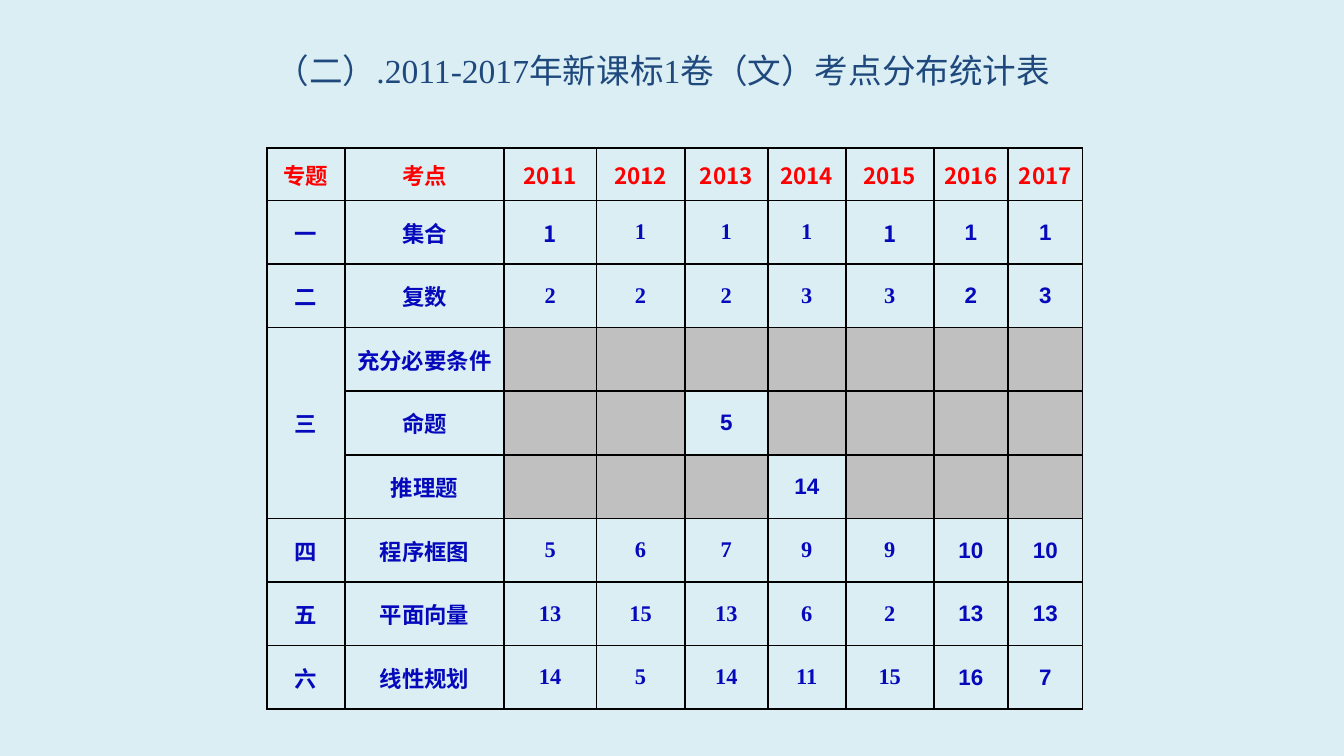
"""Build a slide with a table of exam topics by year."""
from dataclasses import dataclass

from lxml.etree import SubElement
from pptx import Presentation
from pptx.dml.color import RGBColor
from pptx.enum.text import MSO_ANCHOR as Anchor, PP_ALIGN as Align
from pptx.oxml.ns import qn
from pptx.util import Pt


@dataclass(frozen=True)
class Theme:
    background: str = "DBEEF4"
    title: str = "1F497D"
    header: str = "FF0000"
    body: str = "0509BB"
    empty: str = "C0C0C0"
    border: str = "000000"
    title_size: float = 18
    table_size: float = 12
    cjk: str = "Noto Sans CJK SC"
    serif: str = "Times New Roman"
    sans: str = "Arial"


THEME = Theme()
TITLE = "（二）.2011-2017年新课标1卷（文）考点分布统计表"
COLUMN_WIDTHS = [41.8, 85.2, 49.5, 47.4, 44.5, 41.8, 47.1, 39.9, 39.9]
HEADER_HEIGHT, ROW_HEIGHT = 28.1, 34.1
ROWS = [
    ["专题", "考点", "2011", "2012", "2013", "2014", "2015", "2016", "2017"],
    ["一", "集合", "1", "1", "1", "1", "1", "1", "1"],
    ["二", "复数", "2", "2", "2", "3", "3", "2", "3"],
    ["三", "充分必要条件", "", "", "", "", "", "", ""],
    ["", "命题", "", "", "5", "", "", "", ""],
    ["", "推理题", "", "", "", "14", "", "", ""],
    ["四", "程序框图", "5", "6", "7", "9", "9", "10", "10"],
    ["五", "平面向量", "13", "15", "13", "6", "2", "13", "13"],
    ["六", "线性规划", "14", "5", "14", "11", "15", "16", "7"],
]
LOGIC_ROWS = range(3, 6)
FIRST_YEAR, FIRST_SANS_YEAR = 2, 7
CJK_NUMBERS = {(1, 2), (1, 6)}


def format_text(paragraph, font_name, size, color, bold=False):
    """Centre a paragraph and format its runs."""
    paragraph.alignment = Align.CENTER
    for run in paragraph.runs:
        font = run.font
        font.name, font.size, font.bold = font_name, Pt(size), bold
        font.color.rgb = RGBColor.from_string(color)
        SubElement(font._element, qn("a:ea"), typeface=THEME.cjk)


def add_borders(cell):
    """Draw a thin line on each side of a cell."""
    properties = cell._tc.get_or_add_tcPr()
    for side in ("lnL", "lnR", "lnT", "lnB"):
        line = SubElement(properties, qn(f"a:{side}"), w=str(Pt(1)))
        fill = SubElement(line, qn("a:solidFill"))
        SubElement(fill, qn("a:srgbClr"), val=THEME.border)


def cell_font(row, column):
    """Choose the typeface for a position in the table."""
    if row == 0 or column < FIRST_YEAR or (row, column) in CJK_NUMBERS:
        return THEME.cjk
    if column >= FIRST_SANS_YEAR or row in LOGIC_ROWS:
        return THEME.sans
    return THEME.serif


def fill_cell(cell, text, row, column):
    """Write one table cell, greying a year without a question."""
    add_borders(cell)
    if text or column < FIRST_YEAR:
        cell.fill.background()
    else:
        cell.fill.solid()
        cell.fill.fore_color.rgb = RGBColor.from_string(THEME.empty)
    cell.vertical_anchor = Anchor.MIDDLE
    cell.margin_left = cell.margin_right = Pt(4.3)
    cell.margin_top = cell.margin_bottom = Pt(2.2)
    if text:
        cell.text_frame.text = text
        color = THEME.body if row else THEME.header
        format_text(cell.text_frame.paragraphs[0], cell_font(row, column),
                    THEME.table_size, color, bold=True)


def add_topic_table(slide):
    """Add the table of question numbers by topic and year."""
    heights = [HEADER_HEIGHT] + [ROW_HEIGHT] * (len(ROWS) - 1)
    table = slide.shapes.add_table(
        len(ROWS), len(COLUMN_WIDTHS), Pt(143), Pt(79.3),
        Pt(sum(COLUMN_WIDTHS)), Pt(sum(heights))).table
    table.first_row = table.horz_banding = False
    for column, width in zip(table.columns, COLUMN_WIDTHS):
        column.width = Pt(width)
    for row, height in zip(table.rows, heights):
        row.height = Pt(height)
    for row, texts in enumerate(ROWS):
        for column, text in enumerate(texts):
            fill_cell(table.cell(row, column), text, row, column)
    table.cell(LOGIC_ROWS[0], 0).merge(table.cell(LOGIC_ROWS[-1], 0))


def set_title(slide):
    """Place and format the slide title."""
    title = slide.shapes.title
    title.left, title.top, title.width, title.height = (
        Pt(130.3), Pt(13.7), Pt(459.4), Pt(47.5))
    frame = title.text_frame
    frame.text = TITLE
    frame.word_wrap = True
    frame.vertical_anchor = Anchor.MIDDLE
    frame.margin_right = Pt(17)
    format_text(frame.paragraphs[0], THEME.serif, THEME.title_size, THEME.title)


def main():
    """Create the presentation and save it."""
    presentation = Presentation()
    presentation.slide_width, presentation.slide_height = Pt(720), Pt(405)
    slide = presentation.slides.add_slide(presentation.slide_layouts[5])
    background = slide.background.fill
    background.solid()
    background.fore_color.rgb = RGBColor.from_string(THEME.background)
    add_topic_table(slide)
    set_title(slide)
    presentation.save("out.pptx")


if __name__ == "__main__":
    main()
